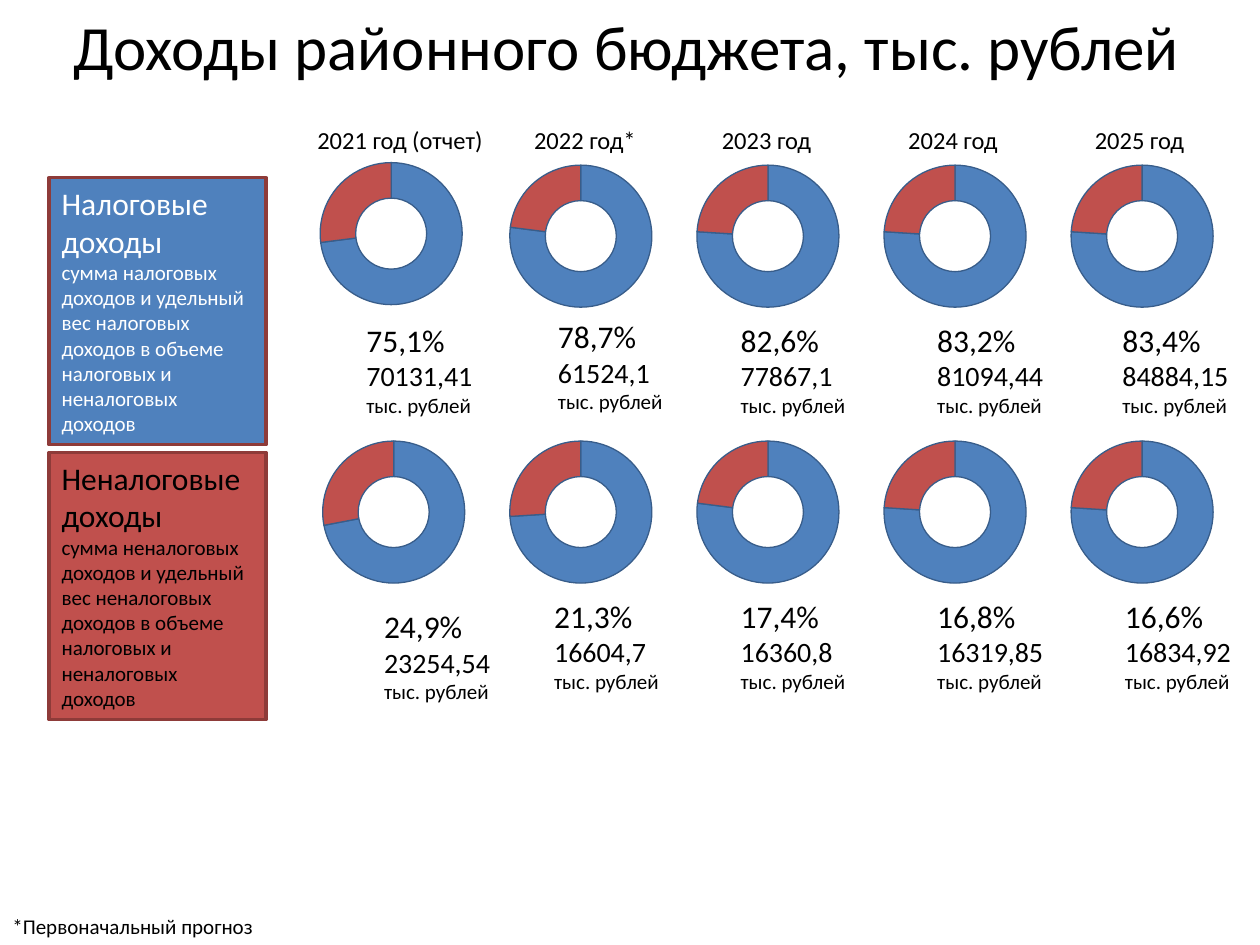
import pptx
import pptx.chart.data
import pptx.dml.color
import pptx.enum.chart
import pptx.enum.shapes
import pptx.enum.text
import pptx.oxml
import pptx.util

Inches, Pt = pptx.util.Inches, pptx.util.Pt
RGBColor = pptx.dml.color.RGBColor
BLUE = RGBColor(0x4F, 0x81, 0xBD)
RED = RGBColor(0xC0, 0x50, 0x4D)
DARK_RED = RGBColor(0x8E, 0x3B, 0x39)
DARK_BLUE = RGBColor(0x38, 0x5D, 0x8A)
WHITE = RGBColor(0xFF, 0xFF, 0xFF)
BLACK = RGBColor(0, 0, 0)
FONT = "Calibri"

TITLE = "Доходы районного бюджета, тыс. рублей"
FOOTNOTE = "*Первоначальный прогноз"
UNIT = "тыс. рублей"
# Text, left, width
YEARS = [
    ("2021 год (отчет)", 2.42, 1.53),
    ("2022 год*", 4.14, 1.02),
    ("2023 год", 5.63, 0.92),
    ("2024 год", 7.11, 0.92),
    ("2025 год", 8.59, 0.92),
]
# Each column: blue share of the ring, percentage, amount, left and top of the caption
INCOME_ROWS = [
    {
        "heading": "Налоговые доходы",
        "note": "сумма налоговых доходов и удельный вес налоговых доходов "
                "в объеме налоговых и неналоговых доходов",
        "fill": BLUE, "color": WHITE, "box_top": 1.41, "ring_top": 1.17,
        "columns": [
            (73, "75,1%", "70131,41", 2.81, 2.5),
            (77, "78,7%", "61524,1", 4.33, 2.47),
            (76, "82,6%", "77867,1", 5.78, 2.5),
            (76, "83,2%", "81094,44", 7.34, 2.5),
            (76, "83,4%", "84884,15", 8.81, 2.5),
        ],
    },
    {
        "heading": "Неналоговые доходы",
        "note": "сумма неналоговых доходов и удельный вес неналоговых доходов "
                "в объеме налоговых и неналоговых доходов",
        "fill": RED, "color": BLACK, "box_top": 3.59, "ring_top": 3.36,
        "columns": [
            (72, "24,9%", "23254,54", 2.95, 4.77),
            (74, "21,3%", "16604,7", 4.3, 4.69),
            (77, "17,4%", "16360,8", 5.78, 4.69),
            (76, "16,8%", "16319,85", 7.34, 4.69),
            (76, "16,6%", "16834,92", 8.83, 4.69),
        ],
    },
]
RING_LEFT, RING_STEP, RING_SIZE = 2.42, 1.485, 1.41
FIRST_RING_SHIFT = -0.02  # the first ring of the top row sits slightly up and left
RING_LAYOUT = (
    '<c:layout xmlns:c="http://schemas.openxmlformats.org/drawingml/2006/chart">'
    '<c:manualLayout><c:layoutTarget val="inner"/>'
    '<c:xMode val="edge"/><c:yMode val="edge"/><c:x val="0.1"/><c:y val="0.1"/>'
    '<c:w val="0.8"/><c:h val="0.8"/></c:manualLayout></c:layout>'
)


def write_lines(frame, lines, color=BLACK, align=pptx.enum.text.PP_ALIGN.LEFT):
    """Fill a text frame with one paragraph per (text, size) pair."""
    for index, (text, size) in enumerate(lines):
        paragraph = frame.add_paragraph() if index else frame.paragraphs[0]
        paragraph.alignment = align
        run = paragraph.add_run()
        run.text = text
        run.font.name = FONT
        run.font.size = Pt(size)
        run.font.color.rgb = color


def add_label(slide, box, lines, wrap=False):
    shape = slide.shapes.add_textbox(*map(Inches, box))
    shape.text_frame.word_wrap = wrap
    shape.text_frame.auto_size = pptx.enum.text.MSO_AUTO_SIZE.SHAPE_TO_FIT_TEXT
    write_lines(shape.text_frame, lines)


def add_ring(slide, left, top, share):
    data = pptx.chart.data.CategoryChartData()
    data.categories = ["1", "2"]
    data.add_series("Series 1", (share, 100 - share))
    chart = slide.shapes.add_chart(
        pptx.enum.chart.XL_CHART_TYPE.DOUGHNUT, Inches(left), Inches(top),
        Inches(RING_SIZE), Inches(RING_SIZE), data).chart
    chart.has_title = False
    chart.has_legend = False
    chart.font.name = FONT
    chart.font.size = Pt(18)
    chart.font.color.rgb = BLACK
    plot = chart.plots[0]
    plot.has_data_labels = False
    plot.vary_by_categories = True
    for index, color in enumerate((BLUE, RED)):
        point = plot.series[0].points[index]
        point.format.fill.solid()
        point.format.fill.fore_color.rgb = color
        point.format.line.color.rgb = DARK_BLUE
        point.format.line.width = Pt(0.75)
    plot_area = chart.element.find(".//{*}plotArea")
    for layout in plot_area.findall("{*}layout"):
        plot_area.remove(layout)
    plot_area.insert(0, pptx.oxml.parse_xml(RING_LAYOUT))


def add_income_box(slide, row):
    shape = slide.shapes.add_shape(
        pptx.enum.shapes.MSO_SHAPE.RECTANGLE, Inches(0.39),
        Inches(row["box_top"]), Inches(1.72), Inches(2.12))
    shape.shadow.inherit = False
    shape.fill.solid()
    shape.fill.fore_color.rgb = row["fill"]
    shape.line.color.rgb = DARK_RED
    shape.line.width = Pt(2)
    frame = shape.text_frame
    frame.word_wrap = True
    frame.auto_size = pptx.enum.text.MSO_AUTO_SIZE.SHAPE_TO_FIT_TEXT
    frame.vertical_anchor = pptx.enum.text.MSO_ANCHOR.TOP
    write_lines(frame, [(row["heading"], 18), (row["note"], 12)], row["color"])


def main():
    presentation = pptx.Presentation()
    presentation.slide_width, presentation.slide_height = Inches(10), Inches(7.5)
    slide = presentation.slides.add_slide(presentation.slide_layouts[5])

    title = slide.shapes.title
    title.left, title.top, title.width, title.height = map(Inches, (0.47, 0, 9, 0.72))
    title.text_frame.vertical_anchor = pptx.enum.text.MSO_ANCHOR.MIDDLE
    write_lines(title.text_frame, [(TITLE, 36)], align=pptx.enum.text.PP_ALIGN.CENTER)

    for row_index, row in enumerate(INCOME_ROWS):
        add_income_box(slide, row)
        for column, (share, percent, amount, left, top) in enumerate(row["columns"]):
            shift = FIRST_RING_SHIFT if row_index == column == 0 else 0
            add_ring(slide, RING_LEFT + column * RING_STEP + shift,
                     row["ring_top"] + shift, share)
            width = 1.06 if len(amount) == 8 else 1.04
            add_label(slide, (left, top, width, 0.88),
                      [(percent, 18), (amount, 16), (UNIT, 12)])

    for year, left, width in YEARS:
        add_label(slide, (left, 0.94, width, 0.34), [(year, 14)])
    add_label(slide, (0, 7.2, 2.73, 0.3), [(FOOTNOTE, 12)], wrap=True)
    presentation.save("out.pptx")


if __name__ == "__main__":
    main()
